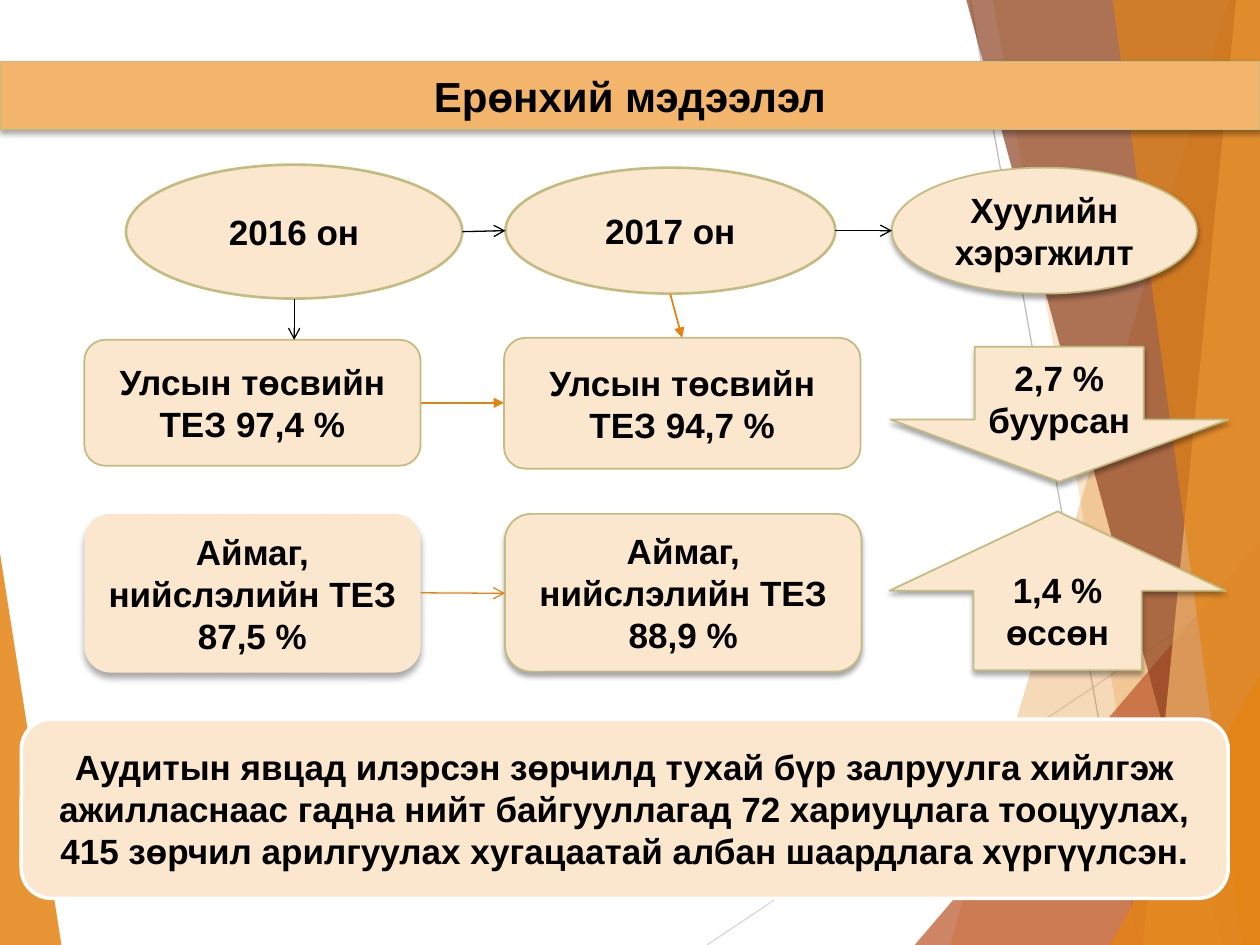
from dataclasses import dataclass

from lxml.etree import SubElement
from pptx import Presentation
from pptx.dml.color import RGBColor
from pptx.enum.shapes import MSO_CONNECTOR, MSO_SHAPE
from pptx.enum.text import MSO_ANCHOR, PP_ALIGN
from pptx.oxml.ns import qn
from pptx.util import Cm, Pt

WIDTH, HEIGHT = 25.4, 19.05
COLORS = {
    "orange": "E48312",
    "rust": "BD582C",
    "brown": "8E4221",
    "apricot": "F3B56C",
    "cream": "FBE6CE",
    "olive": "C2BC80",
    "black": "000000",
    "white": "FFFFFF",
    "silver": "D9D9D9",
    "gray": "BFBFBF",
}


@dataclass
class Facet:
    color: str
    opacity: int
    points: list[tuple[float, float]]


@dataclass
class Node:
    kind: MSO_SHAPE
    left: float
    top: float
    width: float
    height: float
    lines: list[str]
    outline: str | None = "olive"
    outline_width: float = 1
    shadow_blur: float = 0
    shadow_distance: float = 2
    fill: str = "cream"
    size: int = 20
    adjustments: tuple[float, ...] = ()


@dataclass
class Link:
    start: tuple[float, float]
    end: tuple[float, float]
    color: str = "black"
    width: float = 0.75
    head: str | None = "arrow"


def rgb(name: str) -> RGBColor:
    return RGBColor.from_string(COLORS[name])


def band(color: str, opacity: int, top_x: float, bottom_x: float) -> Facet:
    return Facet(color, opacity, [(top_x, 0), (bottom_x, HEIGHT), (WIDTH, HEIGHT), (WIDTH, 0)])


def corner(color: str, opacity: int, bottom_x: float, side_y: float) -> Facet:
    return Facet(color, opacity, [(bottom_x, HEIGHT), (WIDTH, side_y), (WIDTH, HEIGHT)])


def draw_facet(page, facet: Facet) -> None:
    start, *rest = [(Cm(x), Cm(y)) for x, y in facet.points]
    builder = page.shapes.build_freeform(*start)
    builder.add_line_segments(rest, close=True)
    shape = builder.convert_to_shape()
    shape.shadow.inherit = False
    shape.line.fill.background()
    shape.fill.solid()
    shape.fill.fore_color.rgb = rgb(facet.color)
    color = shape._element.spPr.find(qn("a:solidFill"))[0]
    SubElement(color, qn("a:alpha"), val=str(facet.opacity * 1000))


def add_shadow(shape, blur: float, distance: float) -> None:
    effects = shape._element.spPr.find(qn("a:effectLst"))
    shadow = SubElement(
        effects, qn("a:outerShdw"), blurRad=str(Pt(blur)), dist=str(Pt(distance)),
        dir="5400000", rotWithShape="0",
    )
    color = SubElement(shadow, qn("a:srgbClr"), val=COLORS["black"])
    SubElement(color, qn("a:alpha"), val="35000")


def draw_node(page, node: Node) -> None:
    shape = page.shapes.add_shape(
        node.kind, Cm(node.left), Cm(node.top), Cm(node.width), Cm(node.height)
    )
    for index, value in enumerate(node.adjustments):
        shape.adjustments[index] = value
    shape.fill.solid()
    shape.fill.fore_color.rgb = rgb(node.fill)
    if node.outline:
        shape.line.color.rgb = rgb(node.outline)
        shape.line.width = Pt(node.outline_width)
    else:
        shape.line.fill.background()
    shape.shadow.inherit = False
    if node.shadow_blur:
        add_shadow(shape, node.shadow_blur, node.shadow_distance)
    frame = shape.text_frame
    frame.word_wrap = True
    frame.vertical_anchor = MSO_ANCHOR.MIDDLE
    frame.text = "\n".join(node.lines)
    for para in frame.paragraphs:
        para.alignment = PP_ALIGN.CENTER
        para.font.name = "Arial"
        para.font.size = Pt(node.size)
        para.font.bold = True
        para.font.color.rgb = rgb("black")


def draw_link(page, link: Link) -> None:
    ends = [Cm(value) for value in (*link.start, *link.end)]
    connector = page.shapes.add_connector(MSO_CONNECTOR.STRAIGHT, *ends)
    connector.line.color.rgb = rgb(link.color)
    connector.line.width = Pt(link.width)
    if link.head:
        SubElement(connector.line._get_or_add_ln(), qn("a:tailEnd"), type=link.head)
    SubElement(connector._element.spPr, qn("a:effectLst"))


LEFT_FACET = Facet("orange", 85, [(0, 11.15), (1.24, HEIGHT), (0, HEIGHT)])
RIGHT_FACETS = [
    band("orange", 30, 24.77, 19.15),
    band("orange", 20, 20.02, 23.34),
    corner("rust", 72, 18.44, 10.9),
    band("brown", 70, 19.48, 24.64),
    band("apricot", 70, 24.92, 23.04),
    band("orange", 65, 22.43, 25.04),
    corner("orange", 80, 22.38, 13.59),
]
BACKGROUND_LINES = [
    Link((14.25, HEIGHT), (WIDTH, 11.61), "silver", head=None),
    Link((19.56, 0), (22.96, HEIGHT), "gray", head=None),
]

OVAL, ROUNDED = MSO_SHAPE.OVAL, MSO_SHAPE.ROUNDED_RECTANGLE
NODES = [
    Node(OVAL, 2.54, 3.32, 6.78, 2.7, ["2016 он"], outline_width=1.5),
    Node(OVAL, 10.19, 3.38, 6.65, 2.54, ["2017 он"], outline_width=1.5),
    Node(OVAL, 17.98, 3.38, 6.15, 2.54, ["Хуулийн хэрэгжилт"], shadow_blur=3),
    Node(ROUNDED, 1.7, 6.85, 6.78, 2.54, ["Улсын төсвийн ТЕЗ 97,4 %"]),
    Node(ROUNDED, 10.16, 6.81, 7.19, 2.64, ["Улсын төсвийн ТЕЗ 94,7 %"]),
    Node(MSO_SHAPE.DOWN_ARROW, 17.95, 6.99, 6.81, 2.72, ["2,7 % буурсан"],
         shadow_blur=3, adjustments=(0.46, 0.5)),
    Node(ROUNDED, 1.7, 10.36, 6.78, 3.2, ["Аймаг, нийслэлийн ТЕЗ", "87,5 %"],
         outline=None, shadow_blur=4, shadow_distance=3),
    Node(ROUNDED, 10.18, 10.36, 7.19, 3.18, ["Аймаг, нийслэлийн ТЕЗ", "88,9 %"], shadow_blur=3),
    Node(MSO_SHAPE.UP_ARROW, 17.93, 10.31, 6.78, 3.2, ["1,4 % өссөн"], shadow_blur=3),
]
NODES[5].adjustments = (0.5, 0.46)
LINKS = [
    Link((9.32, 4.67), (10.19, 4.65)),
    Link((16.84, 4.65), (17.98, 4.65)),
    Link((8.48, 8.12), (10.16, 8.12), "orange", 1, "triangle"),
    Link((8.48, 11.95), (10.18, 11.96), "orange"),
    Link((5.93, 6.02), (5.93, 6.85)),
    Link((13.51, 5.92), (13.75, 6.81), "orange", 1, "triangle"),
]
SUMMARY = Node(
    ROUNDED, 0.43, 14.5, 24.33, 3.61,
    ["Аудитын явцад илэрсэн зөрчилд тухай бүр залруулга хийлгэж ажилласнаас гадна "
     "нийт байгууллагад 72 хариуцлага тооцуулах, 415 зөрчил арилгуулах хугацаатай "
     "албан шаардлага хүргүүлсэн."],
    outline="white", outline_width=2,
)
BANNER = Node(MSO_SHAPE.RECTANGLE, 0, 1.24, WIDTH, 1.37, ["Ерөнхий мэдээлэл"],
              shadow_blur=3, fill="apricot", size=24)


def main() -> None:
    deck = Presentation()
    deck.slide_width, deck.slide_height = Cm(WIDTH), Cm(HEIGHT)
    page = deck.slides.add_slide(deck.slide_layouts[6])
    draw_facet(page, LEFT_FACET)
    for link in BACKGROUND_LINES:
        draw_link(page, link)
    for facet in RIGHT_FACETS:
        draw_facet(page, facet)
    for node in NODES:
        draw_node(page, node)
    for link in LINKS:
        draw_link(page, link)
    for node in (SUMMARY, BANNER):
        draw_node(page, node)
    deck.save("out.pptx")


if __name__ == "__main__":
    main()
